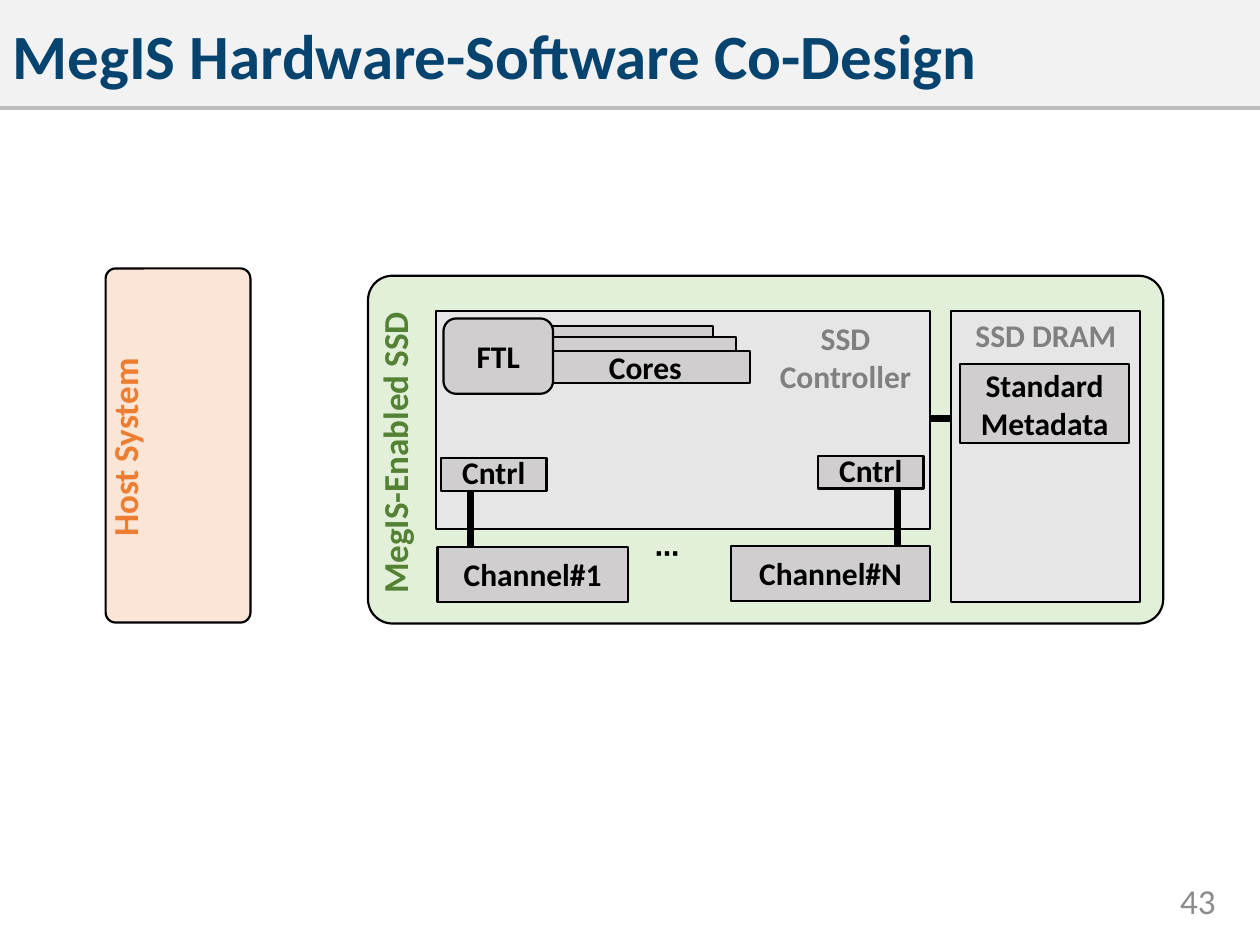
from lxml import etree
from pptx import Presentation
from pptx import util as u
from pptx.dml.color import RGBColor
from pptx.enum import shapes, text
from pptx.oxml.ns import qn

NAVY = RGBColor(0x06, 0x43, 0x6E)
PALE = RGBColor(0xF2, 0xF2, 0xF2)
RULE = RGBColor(0xBF, 0xBF, 0xBF)
NUMBER = RGBColor(0x8C, 0x8C, 0x8C)
PEACH = RGBColor(0xFB, 0xE5, 0xD6)
ORANGE = RGBColor(0xED, 0x7D, 0x31)
MINT = RGBColor(0xE2, 0xF0, 0xD9)
GREEN = RGBColor(0x54, 0x82, 0x35)
PANEL = RGBColor(0xE7, 0xE6, 0xE6)
BLOCK = RGBColor(0xD0, 0xCE, 0xCE)
GRAY = RGBColor(0x80, 0x80, 0x80)
BLACK = RGBColor(0, 0, 0)

RECT = shapes.MSO_SHAPE.RECTANGLE
ROUND = shapes.MSO_SHAPE.ROUNDED_RECTANGLE
TOP, MIDDLE, BOTTOM = (text.MSO_ANCHOR.TOP, text.MSO_ANCHOR.MIDDLE,
                       text.MSO_ANCHOR.BOTTOM)
LEFT, CENTER, RIGHT = (text.PP_ALIGN.LEFT, text.PP_ALIGN.CENTER,
                       text.PP_ALIGN.RIGHT)


def apply(target, values):
    """Set every attribute of target named in values."""
    for name, value in values.items():
        setattr(target, name, value)


def frame_at(box, at):
    """Return the frame values of a part placed relative to its box."""
    left, top, width, height = at
    return {"left": u.Cm(box[0] + left), "top": u.Cm(box[1] + top),
            "width": u.Cm(width), "height": u.Cm(height)}


def write(shape, words, size=18, color=BLACK, bold=True, align=CENTER,
          anchor=MIDDLE, inset=(0, 0), **spacing):
    """Write one paragraph per line of words into a shape."""
    across, down = map(u.Cm, inset)
    frame = shape.text_frame
    apply(frame, {"word_wrap": True, "auto_size": text.MSO_AUTO_SIZE.NONE,
                  "vertical_anchor": anchor, "margin_left": across,
                  "margin_right": across, "margin_top": down,
                  "margin_bottom": down})
    for index, line in enumerate(words.split("\n")):
        para = frame.add_paragraph() if index else frame.paragraphs[0]
        apply(para, {"alignment": align, **spacing})
        span = para.add_run()
        span.text = line
        apply(span.font, {"name": "Calibri", "size": u.Pt(size), "bold": bold})
        span.font.color.rgb = color


def add_block(page, box, at, fill=BLOCK, words="", kind=RECT, corner=0.07,
              turn=0, **style):
    """Add a filled, outlined block, with a label if words are given."""
    shape = page.shapes.add_shape(kind, **frame_at(box, at))
    shape.shadow.inherit = False
    shape.rotation = turn
    shape.fill.solid()
    shape.fill.fore_color.rgb = fill
    shape.line.color.rgb = BLACK
    shape.line.width = u.Pt(1.25)
    if kind == ROUND:
        shape.adjustments[0] = corner
    if words:
        write(shape, words, **style)


def add_label(page, box, at, words, turn=0, **style):
    """Add a text box, turned by the given angle."""
    label = page.shapes.add_textbox(**frame_at(box, at))
    label.rotation = turn
    write(label, words, **style)


def add_line(page, box, start, end, color=BLACK, width=4):
    """Add a straight line between two points of a box."""
    points = [u.Cm(box[axis] + point[axis])
              for point in (start, end) for axis in (0, 1)]
    line = page.shapes.add_connector(shapes.MSO_CONNECTOR.STRAIGHT, *points)
    line.line.color.rgb = color
    line.line.width = u.Pt(width)
    etree.SubElement(line._element.spPr, qn("a:effectLst"))


def build_header(page, box, words):
    """Place the title band and the rule below it."""
    title = page.shapes.title
    apply(title, frame_at(box, (0, 0, *box[2:])))
    title.fill.solid()
    title.fill.fore_color.rgb = PALE
    write(title, words, size=36, color=NAVY, align=LEFT, inset=(0.25, 0.13),
          space_after=u.Pt(6))
    add_line(page, box, (0, box[3]), (box[2], box[3]), RULE, 2)


def build_host(page, box):
    """Draw the host system with its upright label."""
    add_block(page, box, (-2.11, 2.11, 7.14, 2.92), PEACH, kind=ROUND, turn=270)
    add_label(page, box, (-3.2, 3.05, 7.16, 1.12), "Host System", turn=270,
              size=20, color=ORANGE, anchor=TOP, inset=(0.25, 0.13))


def build_controller(page, box):
    """Draw the SSD controller with its cores and translation layer."""
    add_block(page, box, (0, 0, *box[2:]), PANEL)
    add_label(page, box, (6.12, 0.03, 4.27, 1.8), "SSD\nController",
              color=GRAY, anchor=TOP, inset=(0.25, 0.13))
    for left, top, words in ((1.37, 0.3, ""), (1.83, 0.53, ""),
                             (2.11, 0.81, "Cores")):
        add_block(page, box, (left, top, 4.22, 0.64), words=words)
    add_block(page, box, (0.15, 0.15, 2.21, 1.52), words="FTL", kind=ROUND,
              corner=0.17, inset=(0, 0.13))


def build_dram(page, box):
    """Draw the SSD DRAM with its metadata block."""
    add_block(page, box, (0, 0, *box[2:]), PANEL, "SSD DRAM", color=GRAY,
              anchor=TOP, inset=(0, 0.1))
    add_block(page, box, (0.18, 1.07, 3.4, 1.6), words="Standard\nMetadata")


def build_channel(page, box, words, cntrl, stem):
    """Draw a channel, its flash controller and the line joining them."""
    left, top = cntrl
    add_line(page, box, (stem, top + 0.66), (stem, 0.76))
    add_block(page, box, (left, top, 2.13, 0.66), words="Cntrl", anchor=BOTTOM)
    add_block(page, box, (0, 0, *box[2:]), words=words, inset=(0.25, 0))


def build_ssd(page, box):
    """Draw the SSD and the regions inside it."""
    left, top = box[:2]
    add_block(page, box, (0, 0, *box[2:]), MINT, kind=ROUND)
    add_line(page, box, (10.39, 2.87), (12.37, 2.87))
    build_dram(page, (left + 11.76, top + 0.71, 3.81, 5.87))
    build_controller(page, (left + 1.37, top + 0.71, 9.96, 4.39))
    add_label(page, box, (5.51, 5.13, 1.04, 0.89), "⋯", size=14)
    add_label(page, box, (-2.59, 2.82, 7.09, 1.5), "MegIS-Enabled SSD",
              turn=270, size=20, color=GREEN, anchor=TOP, inset=(0.25, 0.13),
              line_spacing=0.7)
    build_channel(page, (left + 7.32, top + 5.44, 4.01, 1.12), "Channel#N",
                  (1.75, -1.81), 3.35)
    build_channel(page, (left + 1.4, top + 5.46, 3.84, 1.12), "Channel#1",
                  (0.07, -1.78), 0.66)


def main():
    """Build the slide and save it."""
    deck = Presentation()
    apply(deck, {"slide_width": u.Cm(25.4), "slide_height": u.Cm(19.05)})
    page = deck.slides.add_slide(deck.slide_layouts[5])
    build_header(page, (0, 0, 25.4, 2.18), "MegIS Hardware-Software Co-Design")
    add_label(page, (0, 0), (22.02, 17.65, 2.74, 1.02), "43", size=20,
              color=NUMBER, bold=False, align=RIGHT, inset=(0.25, 0.13))
    build_host(page, (2.13, 5.41, 2.92, 7.14))
    build_ssd(page, (7.42, 5.56, 16.03, 7.01))
    deck.save("out.pptx")


if __name__ == "__main__":
    main()
